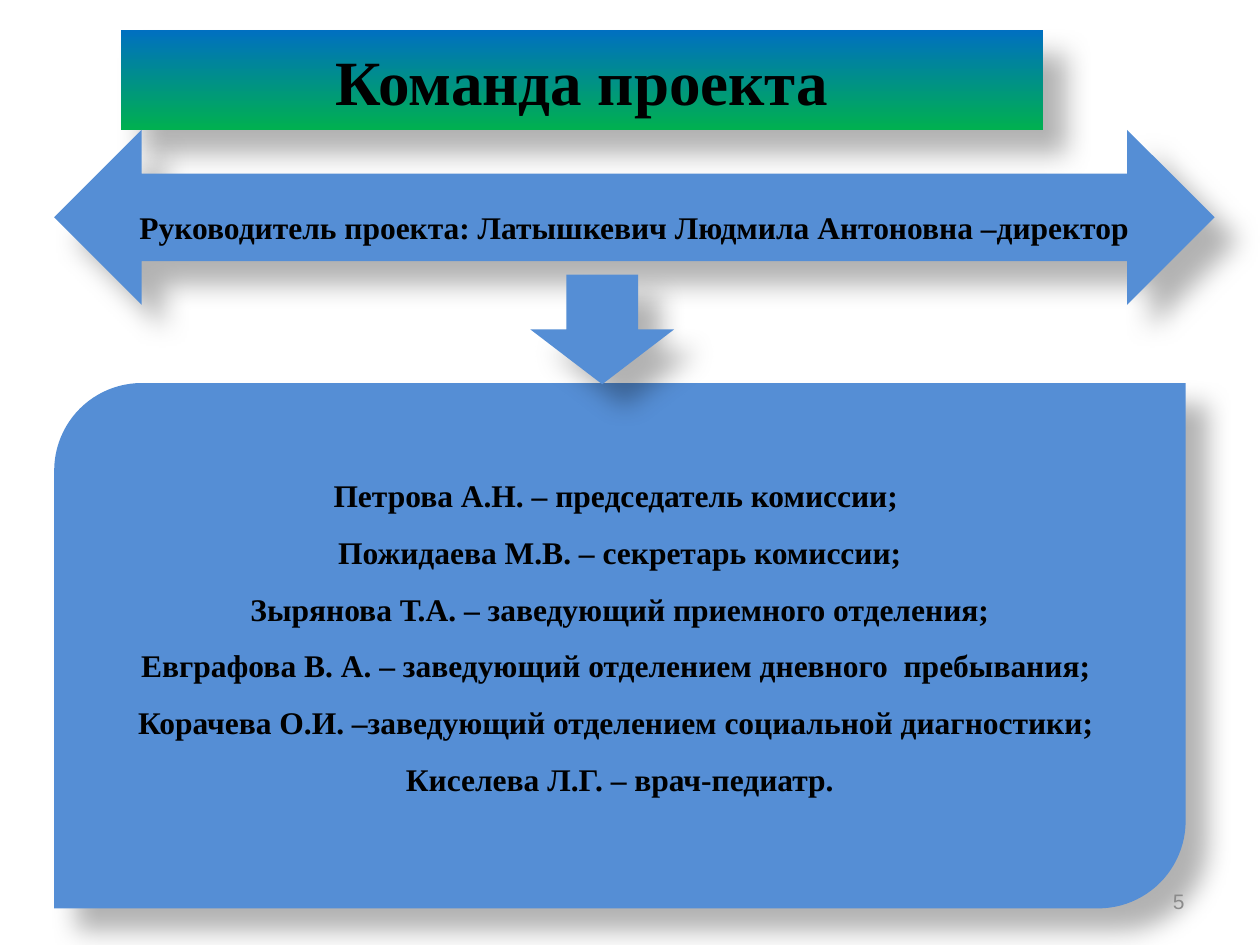
from dataclasses import dataclass

from lxml import etree
from pptx import Presentation
from pptx.dml.color import RGBColor
from pptx.enum import shapes, text
from pptx.oxml import ns
from pptx.util import Inches, Pt

KIND = shapes.MSO_SHAPE
ALIGN = text.PP_ALIGN


@dataclass(frozen=True)
class Theme:
    blue: str = "558ED5"
    low: str = "00B050"
    high: str = "0070C0"
    ink: str = "000000"
    gray: str = "8B8B8B"
    serif: str = "Times New Roman"
    sans: str = "Arial"
    title: int = 36
    body: int = 18
    small: int = 12


@dataclass(frozen=True)
class Block:
    kind: int
    box: tuple[float, float, float, float]
    lines: tuple[str, ...] = ()
    size: int = 18
    space: float = 1.0
    foot: float = 0.05
    fade: bool = False


THEME = Theme()
FOOT = 0.34  # bottom inset that lifts the text above the middle

TEAM = (
    "Петрова А.Н. – председатель комиссии; ",
    "Пожидаева М.В. – секретарь комиссии;",
    "Зырянова Т.А. – заведующий приемного отделения;",
    "Евграфова В. А. – заведующий отделением дневного  пребывания; ",
    "Корачева О.И. –заведующий отделением социальной диагностики; ",
    "Киселева Л.Г. – врач-педиатр.",
)
LEAD = "Руководитель проекта: Латышкевич Людмила Антоновна –директор"

BLOCKS = (
    Block(KIND.RECTANGLE, (0.96, 0.24, 7.32, 0.79), ("Команда проекта",),
          THEME.title, fade=True),
    Block(KIND.ROUND_2_DIAG_RECTANGLE, (0.43, 3.04, 8.98, 4.17), TEAM,
          THEME.body, 1.5, FOOT),
    Block(KIND.LEFT_RIGHT_ARROW, (0.43, 1.03, 9.21, 1.39), (LEAD,),
          THEME.body, 2.5, FOOT),
    Block(KIND.DOWN_ARROW, (4.21, 2.18, 1.14, 0.87)),
)


def shade(shape) -> None:
    """Soft shadow to the lower right."""
    shape.shadow.inherit = False
    fx = shape._element.spPr.find(ns.qn("a:effectLst"))
    drop = etree.SubElement(
        fx, ns.qn("a:outerShdw"), blurRad=str(Pt(15)), dist=str(Pt(18)),
        dir=str(45 * 60000), algn="tl", rotWithShape="0")
    tint = etree.SubElement(drop, ns.qn("a:srgbClr"), val=THEME.ink)
    etree.SubElement(tint, ns.qn("a:alpha"), val="30000")


def write(frame, lines: tuple[str, ...], size: int, name: str, color: str,
          align, bold: bool = False, space: float = 1.0) -> None:
    frame.text = "\n".join(lines)
    frame.word_wrap = True
    frame.vertical_anchor = text.MSO_ANCHOR.MIDDLE
    for para in frame.paragraphs:
        para.alignment = align
        para.line_spacing = space
        for run in para.runs:
            font = run.font
            font.name, font.size, font.bold = name, Pt(size), bold
            font.color.rgb = RGBColor.from_string(color)


def draw(slide, block: Block) -> None:
    shape = slide.shapes.add_shape(block.kind, *map(Inches, block.box))
    shape.line.fill.background()
    if block.fade:
        shape.fill.gradient()
        shape.fill.gradient_angle = 90
        for stop, color in zip(shape.fill.gradient_stops,
                               (THEME.low, THEME.high)):
            stop.color.rgb = RGBColor.from_string(color)
    else:
        shape.fill.solid()
        shape.fill.fore_color.rgb = RGBColor.from_string(THEME.blue)
    shade(shape)
    if block.lines:
        shape.text_frame.margin_bottom = Inches(block.foot)
        write(shape.text_frame, block.lines, block.size, THEME.serif,
              THEME.ink, ALIGN.CENTER, True, block.space)


def main() -> None:
    deck = Presentation()
    deck.slide_width, deck.slide_height = Inches(10), Inches(7.5)
    slide = deck.slides.add_slide(deck.slide_layouts[6])

    # Title, team panel and arrows
    for block in BLOCKS:
        draw(slide, block)

    # Page number
    page = slide.shapes.add_textbox(*map(Inches, (7.17, 6.95, 2.33, 0.4)))
    write(page.text_frame, ("5",), THEME.small, THEME.sans, THEME.gray,
          ALIGN.RIGHT)

    deck.save("out.pptx")


if __name__ == "__main__":
    main()
